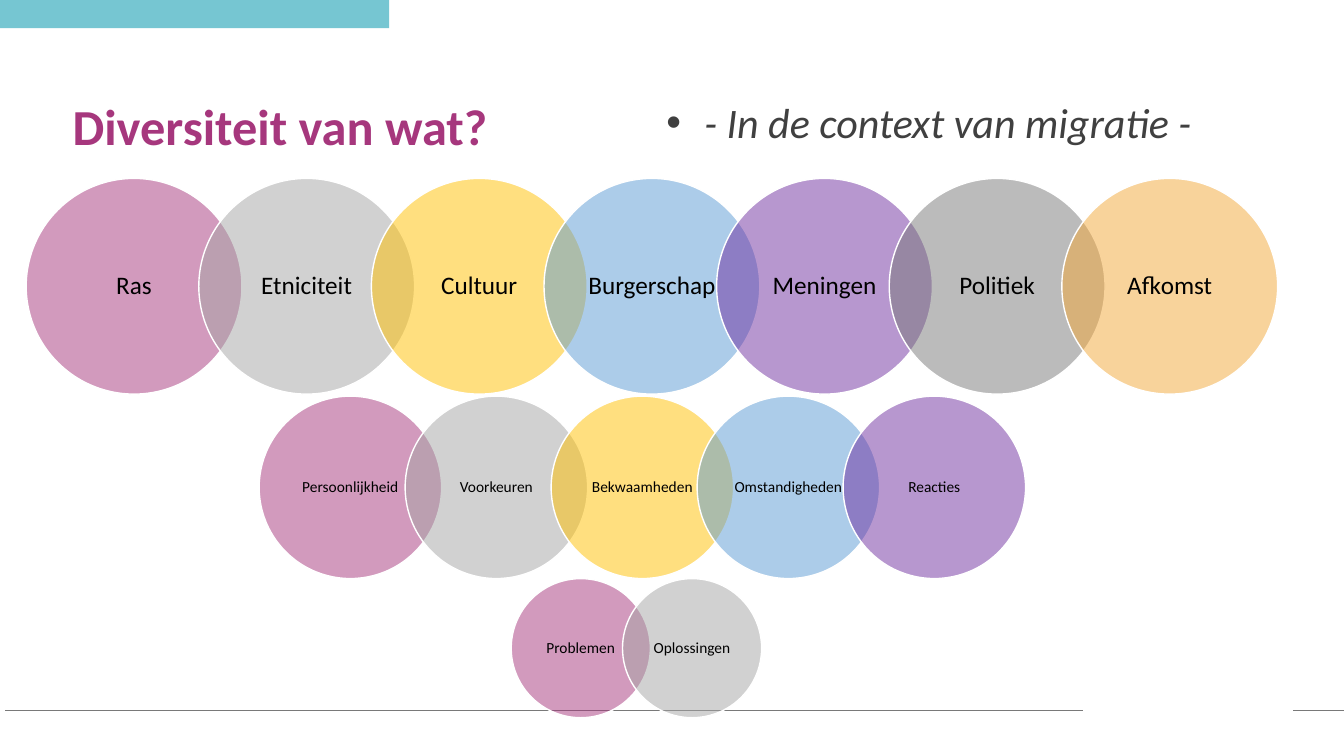
from pptx import Presentation
from pptx.util import Inches, Pt
from pptx.dml.color import RGBColor
from pptx.enum.shapes import MSO_SHAPE as Shape, MSO_CONNECTOR as Link
from pptx.enum.text import PP_ALIGN as Align, MSO_ANCHOR as Anchor, MSO_AUTO_SIZE as Fit
from pptx.oxml.ns import qn
from lxml.etree import SubElement as Sub


def paint(fmt, tone):
    fmt.solid()
    fmt.fore_color.rgb = RGBColor.from_string(tone)


def write(frame, text, tone, align, font):
    frame.text = text
    para = frame.paragraphs[0]
    para.alignment = align
    para.line_spacing = 0.9
    para.space_before = Pt(0)
    face = para.runs[0].font
    for key, val in font.items():
        setattr(face, key, val)
    face.name = "Calibri"
    paint(face.fill, tone)


deck = Presentation()
deck.slide_width, deck.slide_height = Inches(13.33), Inches(7.5)
slide = deck.slides.add_slide(deck.slide_layouts[1])
items = slide.shapes

# Top bar
bar = items.add_shape(Shape.RECTANGLE, 0, 0, Inches(3.86), Inches(0.28))
bar.shadow.inherit = False
paint(bar.fill, "76C6D2")
bar.line.fill.background()

# Footer rule, in two parts
for start, end in [(10.74, 0.05), (13.33, 12.82)]:
    rule = items.add_connector(Link.STRAIGHT, Inches(start), Inches(7.05),
                               Inches(end), Inches(7.05))
    paint(rule.line.fill, "797979")
    rule.line.width = Pt(0.5)
    Sub(rule.element.spPr, qn("a:effectLst"))

# Title and subtitle
heads = [
    (items.title, 0.62, 5.74, "Diversiteit van wat?", "A6377D",
     {"size": Pt(36), "bold": True}),
    (slide.placeholders[1], 6.51, 6.17, "- In de context van migratie -", "404040",
     {"size": Pt(30), "italic": True}),
]
for head, left, width, text, tone, font in heads:
    head.left, head.top = Inches(left), Inches(0.96)
    head.width, head.height = Inches(width), Inches(1.6)
    frame = head.text_frame
    frame.auto_size = Fit.NONE
    frame.vertical_anchor = Anchor.TOP
    props = frame.paragraphs[0]._p.get_or_add_pPr()
    props.set("marL", "0")
    props.set("indent", "0")
    Sub(props, qn("a:buNone"))
    write(frame, text, tone, Align.LEFT, font)

# Rows of circles, each overlapping the next by a fifth
tones = ["A6377D", "A5A5A5", "FFC000", "5B9BD5", "7030A0", "797979", "F3A839"]
rows = [
    (0.26, 1.77, 2.14, 18, ["Ras", "Etniciteit", "Cultuur", "Burgerschap",
                            "Meningen", "Politiek", "Afkomst"]),
    (2.57, 3.93, 1.81, 11, ["Persoonlijkheid", "Voorkeuren", "Bekwaamheden",
                            "Omstandigheden", "Reacties"]),
    (5.07, 5.74, 1.38, 11, ["Problemen", "Oplossingen"]),
]
for left, top, size, points, words in rows:
    for i, (word, tone) in enumerate(zip(words, tones)):
        disc = items.add_shape(Shape.OVAL, Inches(left + 0.8 * size * i), Inches(top),
                               Inches(size), Inches(size))
        disc.shadow.inherit = False
        paint(disc.fill, tone)
        shade = disc.element.spPr.find(qn("a:solidFill"))[0]
        Sub(shade, qn("a:alpha"), val="50000")
        paint(disc.line.fill, "FFFFFF")
        disc.line.width = Pt(1)
        frame = disc.text_frame
        frame.vertical_anchor = Anchor.MIDDLE
        for side in ("left", "right", "top", "bottom"):
            setattr(frame, "margin_" + side, 0)
        write(frame, word, "000000", Align.CENTER, {"size": Pt(points)})

deck.save("out.pptx")
